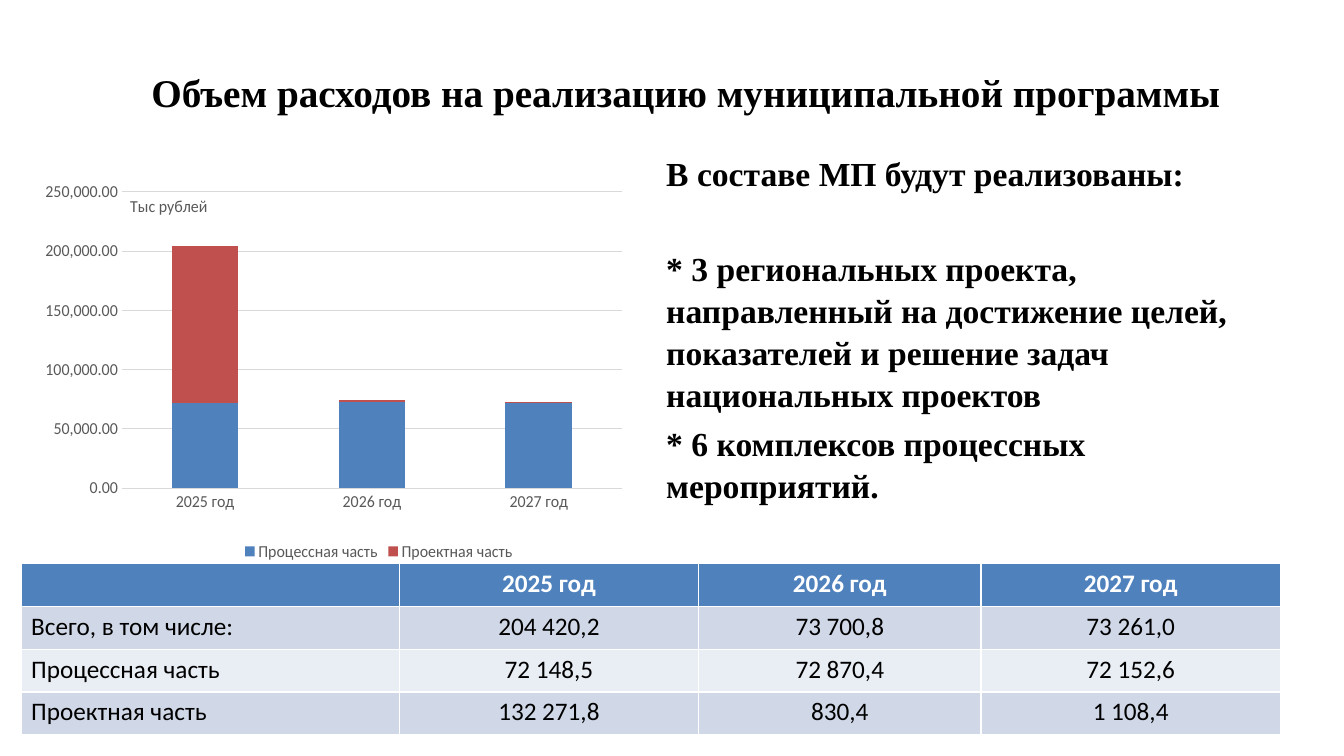
from lxml import etree
from pptx import Presentation
from pptx.chart.data import CategoryChartData
from pptx.dml.color import RGBColor
from pptx.enum.chart import XL_CHART_TYPE as ChartType, XL_LEGEND_POSITION as LegendPosition, XL_TICK_MARK as TickMark
from pptx.enum.text import MSO_ANCHOR as Anchor, PP_ALIGN as Align
from pptx.oxml import parse_xml
from pptx.util import Inches, Pt

CHART_NS = "http://schemas.openxmlformats.org/drawingml/2006/chart"


def style_font(font, size, color, name="Calibri", bold=False):
    font.size = Pt(size)
    font.name = name
    font.bold = bold
    font.color.rgb = RGBColor.from_string(color)


def make_layout(**places):
    layout = parse_xml(f'<c:layout xmlns:c="{CHART_NS}"><c:manualLayout/></c:layout>')
    for tag, value in places.items():
        etree.SubElement(layout[0], f"{{{CHART_NS}}}{tag}").set("val", str(value))
    return layout


deck = Presentation()
deck.slide_width = Inches(13.33)
deck.slide_height = Inches(7.5)
page = deck.slides.add_slide(deck.slide_layouts[6])
years = ["2025 год", "2026 год", "2027 год"]

title_box = page.shapes.add_textbox(Inches(0.65), Inches(0.29), Inches(12.3), Inches(1.25))
title_box.text_frame.word_wrap = True
title_box.text_frame.vertical_anchor = Anchor.MIDDLE
title_box.text_frame.text = "Объем расходов на реализацию муниципальной программы"
title = title_box.text_frame.paragraphs[0]
title.alignment = Align.CENTER
style_font(title.runs[0].font, 28, "000000", "Times New Roman", True)

spending = CategoryChartData()
spending.categories = years
spending.add_series("Процессная часть", [72000, 73000, 72000])
spending.add_series("Проектная часть", [132000, 1000, 1000])
chart = page.shapes.add_chart(ChartType.COLUMN_STACKED, Inches(0.45), Inches(1.3),
                              Inches(5.89), Inches(4.32), spending).chart
style_font(chart.font, 12, "595959")
chart.has_title = False

plot = chart.plots[0]
plot.gap_width = 150
plot.overlap = 100
plot.vary_by_categories = False
for series, color in zip(plot.series, ["4F81BD", "C0504D"]):
    series.format.fill.solid()
    series.format.fill.fore_color.rgb = RGBColor.from_string(color)

for axis in (chart.category_axis, chart.value_axis):
    axis.major_tick_mark = TickMark.NONE
    axis.minor_tick_mark = TickMark.NONE
    axis.format.line.fill.background()
    style_font(axis.tick_labels.font, 12, "595959")

values = chart.value_axis
values.minimum_scale = 0
values.maximum_scale = 250000
values.major_unit = 50000
values.tick_labels.number_format = "#,##0.00"
values.tick_labels.number_format_is_linked = False
values.major_gridlines.format.line.width = Pt(0.75)
values.major_gridlines.format.line.color.rgb = RGBColor.from_string("D9D9D9")
unit_frame = values.axis_title.text_frame
unit_frame.text = "Тыс рублей"
style_font(unit_frame.paragraphs[0].runs[0].font, 12, "595959")
body_properties = unit_frame._txBody.bodyPr
body_properties.set("rot", "0")
body_properties.set("vert", "horz")

chart.has_legend = True
legend = chart.legend
legend.position = LegendPosition.BOTTOM
legend.include_in_layout = False
style_font(legend.font, 12, "595959")

placements = [
    (chart._chartSpace.chart.plotArea, "",
     make_layout(layoutTarget="inner", xMode="edge", yMode="edge", x=0.08, y=0.14, w=0.89, h=0.68)),
    (values.axis_title._element, "tx", make_layout(xMode="edge", yMode="edge", x=0.09, y=0.14)),
    (legend._element, "legendPos", make_layout(xMode="edge", yMode="edge", x=0.29, y=0.94)),
]
for element, previous, layout in placements:
    for old in element.findall(f"{{{CHART_NS}}}layout"):
        element.remove(old)
    if previous:
        element.find(f"{{{CHART_NS}}}{previous}").addnext(layout)
    else:
        element.insert(0, layout)

goals_box = page.shapes.add_textbox(Inches(6.51), Inches(1.45), Inches(6.14), Inches(4.13))
goals = goals_box.text_frame
goals.word_wrap = True
goals.text = "\n".join([
    "В составе МП будут реализованы:",
    "* 3 региональных проекта, направленный на достижение целей, показателей и решение задач национальных проектов",
    "* 6 комплексов процессных мероприятий.",
])
for para, space in zip(goals.paragraphs, [0, 38.4, 4.8]):
    para.space_before = Pt(space)
    para.line_spacing = 1.04
    style_font(para.runs[0].font, 24, "000000", "Times New Roman", True)

rows = [
    ["", *years],
    ["Всего, в том числе:", "204 420,2", "73 700,8", "73 261,0"],
    ["Процессная часть", "72 148,5", "72 870,4", "72 152,6"],
    ["Проектная часть", "132 271,8", "830,4", "1 108,4"],
]
row_fills = ["4F81BD", "D0D8E8", "E9EDF4", "D0D8E8"]
table = page.shapes.add_table(4, 4, Inches(0.21), Inches(5.59), Inches(12.49), Inches(1.7)).table
for column, width in zip(table.columns, [3.75, 2.97, 2.8, 2.97]):
    column.width = Inches(width)
for row_index, (texts, fill) in enumerate(zip(rows, row_fills)):
    for column_index, text in enumerate(texts):
        cell = table.cell(row_index, column_index)
        cell.fill.solid()
        cell.fill.fore_color.rgb = RGBColor.from_string(fill)
        cell.text = text
        para = cell.text_frame.paragraphs[0]
        para.alignment = Align.CENTER if column_index else Align.LEFT
        is_header = row_index == 0
        style_font(para.font, 18, "FFFFFF" if is_header else "000000")
        for span in para.runs:
            style_font(span.font, 18, "FFFFFF" if is_header else "000000", bold=is_header)

deck.save("out.pptx")
